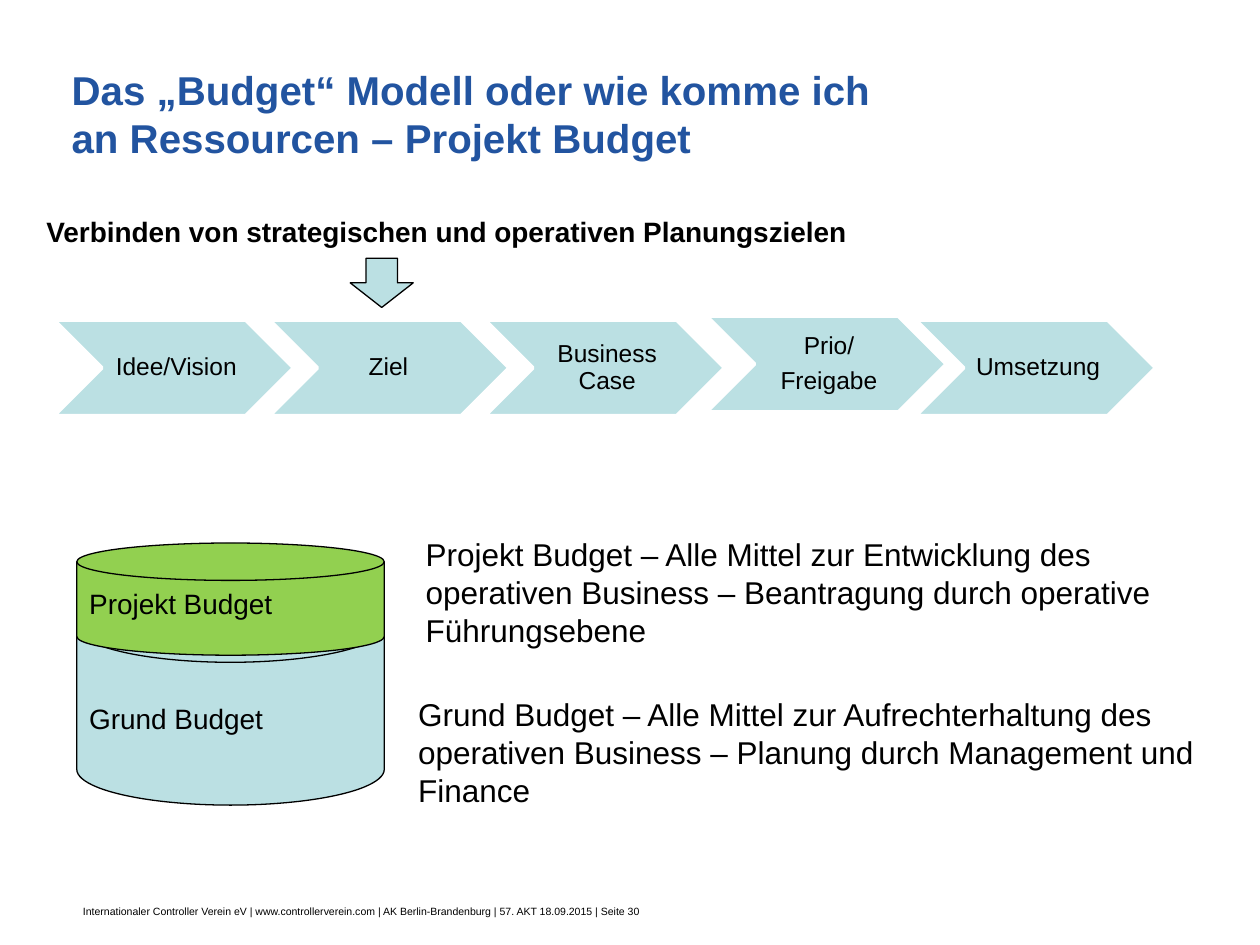
from pptx import Presentation
from pptx.dml.color import RGBColor
from pptx.enum.shapes import MSO_SHAPE
from pptx.enum.text import MSO_ANCHOR, PP_ALIGN
from pptx.util import Inches, Pt

CHEVRON = MSO_SHAPE.CHEVRON
DISK = MSO_SHAPE.FLOWCHART_MAGNETIC_DISK
DOWN = MSO_SHAPE.DOWN_ARROW
LEFT, CENTER = PP_ALIGN.LEFT, PP_ALIGN.CENTER
TOP, MIDDLE = MSO_ANCHOR.TOP, MSO_ANCHOR.MIDDLE

COLS, ROWS = 100, 75
HUES = {"ice": "BBE0E3", "lime": "92D050", "blue": "2254A0",
        "ink": "000000", "paper": "FFFFFF"}
INSET = (0.1, 0.05, 0.1, 0.05)


def hue(name):
    return RGBColor.from_string(HUES[name])


def put_text(shape, text, size=18, color="ink", bold=False, align=LEFT,
             anchor=TOP, inset=INSET, lead=None, after=None):
    """Write text into a shape, one paragraph per line."""
    frame = shape.text_frame
    frame.word_wrap = True
    frame.vertical_anchor = anchor
    (frame.margin_left, frame.margin_top,
     frame.margin_right, frame.margin_bottom) = map(Inches, inset)
    frame.text = text
    for para in frame.paragraphs:
        para.alignment = align
        if lead:
            para.line_spacing = lead
        if after:
            para.space_after = Pt(after)
        para.font.name = "Arial"
        para.font.size = Pt(size)
        para.font.bold = bold
        para.font.color.rgb = hue(color)


class Deck:
    """Slide on a grid of 100 columns and 75 rows."""

    def __init__(self):
        self.prs = Presentation()
        self.prs.slide_width = Inches(10)
        self.prs.slide_height = Inches(7.5)
        self.slide = self.prs.slides.add_slide(self.prs.slide_layouts[6])

    def place(self, col, row, wide, high):
        x = self.prs.slide_width / COLS
        y = self.prs.slide_height / ROWS
        return [round(v) for v in (col * x, row * y, wide * x, high * y)]

    def label(self, box, text, **form):
        shape = self.slide.shapes.add_textbox(*self.place(*box))
        put_text(shape, text, **form)

    def block(self, kind, box, fill="ice", line="ink", width=0.75,
              text="", **form):
        shape = self.slide.shapes.add_shape(kind, *self.place(*box))
        shape.shadow.inherit = False
        shape.fill.solid()
        shape.fill.fore_color.rgb = hue(fill)
        shape.line.color.rgb = hue(line)
        shape.line.width = Pt(width)
        if text:
            put_text(shape, text, **form)

    def step(self, col, row, text):
        self.block(CHEVRON, (col, row, 19, 7.6), line="paper", width=2,
                   text=text, size=14, align=CENTER, anchor=MIDDLE,
                   inset=(0.06, 0.02, 0.02, 0.02), lead=0.9, after=5)


def main():
    deck = Deck()

    # Footer and title
    deck.label((5.6, 71.3, 48.2, 2),
               "Internationaler Controller Verein eV | www.controllerverein.com"
               " | AK Berlin-Brandenburg | 57. AKT 18.09.2015 | Seite 30",
               size=6)
    deck.label((4.7, 4.3, 70.1, 9.4),
               "Das „Budget“ Modell oder wie komme ich an Ressourcen"
               " – Projekt Budget",
               size=23, color="blue", bold=True, anchor=MIDDLE,
               inset=(0.1, 0.05, 0.3, 0.05))

    # Process chain; the approval step sits slightly off the row
    steps = ["Idee/Vision", "Ziel ", "Business Case", "Prio/\nFreigabe",
             "Umsetzung"]
    shift = {3: (0.5, -0.3)}
    for i, name in enumerate(steps):
        dx, dy = shift.get(i, (0, 0))
        deck.step(4.3 + 17.1 * i + dx, 25.4 + dy, name)

    # Stacked budgets
    deck.block(DISK, (6.1, 46.9, 24.4, 17), text="Grund Budget",
               size=16, inset=(0.1, 0.31, 0.1, 0.05))
    deck.block(DISK, (6.1, 43.1, 24.4, 8.9), fill="lime",
               text="Projekt Budget", size=16)

    # Explanations
    deck.label((32.8, 42, 65.4, 10.1),
               "Projekt Budget – Alle Mittel zur Entwicklung des operativen"
               " Business – Beantragung durch operative Führungsebene")
    deck.label((32.2, 54.7, 65.4, 10.1),
               "Grund Budget – Alle Mittel zur Aufrechterhaltung des operativen"
               " Business – Planung durch Management und Finance")

    # Planning goals pointing at the chain
    deck.label((2.7, 16.5, 66.4, 3.7),
               "Verbinden von strategischen und operativen Planungszielen",
               size=16, bold=True)
    deck.block(DOWN, (27.8, 20.5, 5, 3.9))

    deck.prs.save("out.pptx")


if __name__ == "__main__":
    main()
